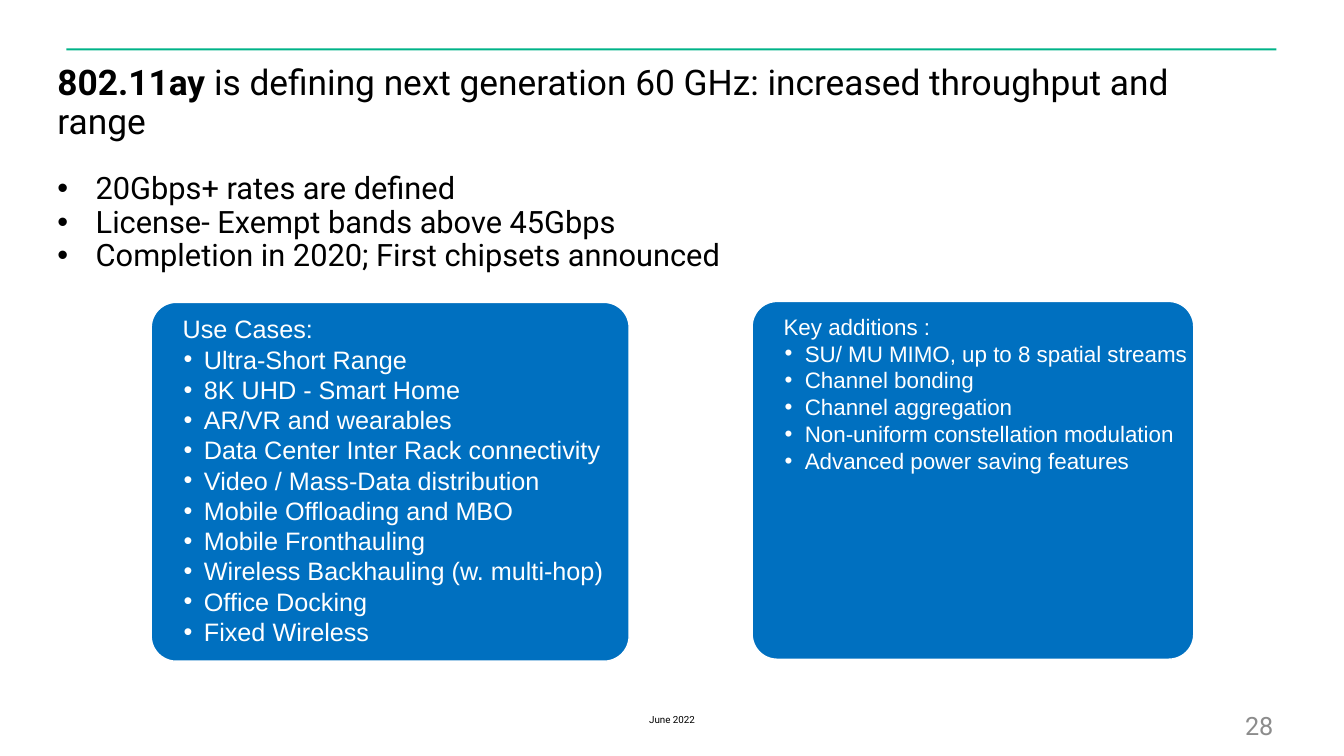
from pptx import Presentation
from pptx.dml.color import RGBColor
from pptx.enum.shapes import MSO_SHAPE as Shape
from pptx.enum.text import MSO_ANCHOR as Anchor, PP_ALIGN as Align
from pptx.oxml.ns import qn
from pptx.util import Pt
from lxml.etree import SubElement as sub

# Content
TITLE = [("802.11ay ", True),
         ("is defining next generation 60 GHz: increased throughput and range", False)]
FACTS = ["20Gbps+ rates are defined",
         "License- Exempt bands above 45Gbps",
         "Completion in 2020; First chipsets announced"]
CARDS = [
    dict(box=(150, 300, 474, 356), size="uses", dent=(45, -27), head="Use Cases:",
         items=["Ultra-Short Range", "8K UHD - Smart Home", "AR/VR and wearables",
                "Data Center Inter Rack connectivity", "Video / Mass-Data distribution",
                "Mobile Offloading and MBO", "Mobile Fronthauling",
                "Wireless Backhauling (w. multi-hop)", "Office Docking", "Fixed Wireless"]),
    dict(box=(746, 299, 438, 355), size="adds", dent=(53, -35), head="Key additions :",
         items=["SU/ MU MIMO, up to 8 spatial streams", "Channel bonding",
                "Channel aggregation", "Non-uniform constellation modulation",
                "Advanced power saving features"]),
]
PAGE, DATE = "28", "June 2022"

# Theme
THEME = dict(
    color=dict(rule="00B388", card="0070C0", light="FFFFFF", dark="000000", page="8C8C8C"),
    size=dict(title=25.2, facts=22, uses=18, adds=16, page=18, date=7),
    font=dict(main="Roboto", card="Arial"),
)
PX = 9144  # 100 px to the inch


def emu(*vals):
    return [v * PX for v in vals]


def tint(name):
    return RGBColor.from_string(THEME["color"][name])


def setup(frame, pad=(0, 0), wrap=True):
    frame.word_wrap = wrap
    frame.vertical_anchor = Anchor.TOP
    frame.margin_left = frame.margin_right = pad[0] * PX
    frame.margin_top = frame.margin_bottom = pad[1] * PX
    return frame


def text(box, **opts):
    return setup(slide.shapes.add_textbox(*emu(*box)).text_frame, **opts)


def write(para, words, size, color="dark", font="main", bold=False):
    run = para.add_run()
    run.text = words
    run.font.size = Pt(THEME["size"][size])
    run.font.name = THEME["font"][font]
    run.font.color.rgb = tint(color)
    run.font.bold = bold


def line(frame, first, space=1.0, align=Align.LEFT):
    para = frame.paragraphs[0] if first else frame.add_paragraph()
    para.alignment = align
    para.line_spacing = space
    return para


def indent(para, left, hang, dot=None):
    props = para._p.get_or_add_pPr()
    props.set("marL", str(left * PX))
    props.set("indent", str(hang * PX))
    if dot:
        clr = sub(props, qn("a:buClr"))
        sub(clr, qn("a:srgbClr"), val=THEME["color"][dot])
        sub(props, qn("a:buFont"), typeface="Arial")
        sub(props, qn("a:buChar"), char="•")


def block(kind, box, fill):
    shape = slide.shapes.add_shape(kind, *emu(*box))
    shape.shadow.inherit = False
    shape.fill.solid()
    shape.fill.fore_color.rgb = tint(fill)
    return shape


deck = Presentation()
deck.slide_width, deck.slide_height = emu(1333, 750)
slide = deck.slides.add_slide(deck.slide_layouts[6])

# Top rule
block(Shape.RECTANGLE, (66, 48, 1200, 2), "rule").line.fill.background()

# Cards
for card in CARDS:
    shape = block(Shape.ROUNDED_RECTANGLE, card["box"], "card")
    shape.adjustments[0] = 0.07
    shape.line.color.rgb = tint("light")
    shape.line.width = Pt(1)
    frame = setup(shape.text_frame, pad=(6, 4), wrap=False)
    for i, words in enumerate([card["head"], *card["items"]]):
        para = line(frame, i == 0)
        if i:
            para.level = 1
            indent(para, 39, -20, "light")
        else:
            indent(para, *card["dent"])
        write(para, words, card["size"], "light", "card")

# Title
para = line(text((57, 65, 1184, 60)), True, 0.9)
for words, bold in TITLE:
    write(para, words, "title", bold=bold)

# Facts
frame = text((57, 172, 720, 100))
for i, words in enumerate(FACTS):
    para = line(frame, i == 0, 0.9)
    indent(para, 38, -38, "dark")
    write(para, words, "facts")

# Footer
para = line(text((1225, 700, 58, 25), pad=(10, 5)), True)
write(para, PAGE, "page", "page")
para = line(text((612, 703, 109, 23), pad=(10, 5)), True, align=Align.CENTER)
write(para, DATE, "date")

deck.save("out.pptx")
